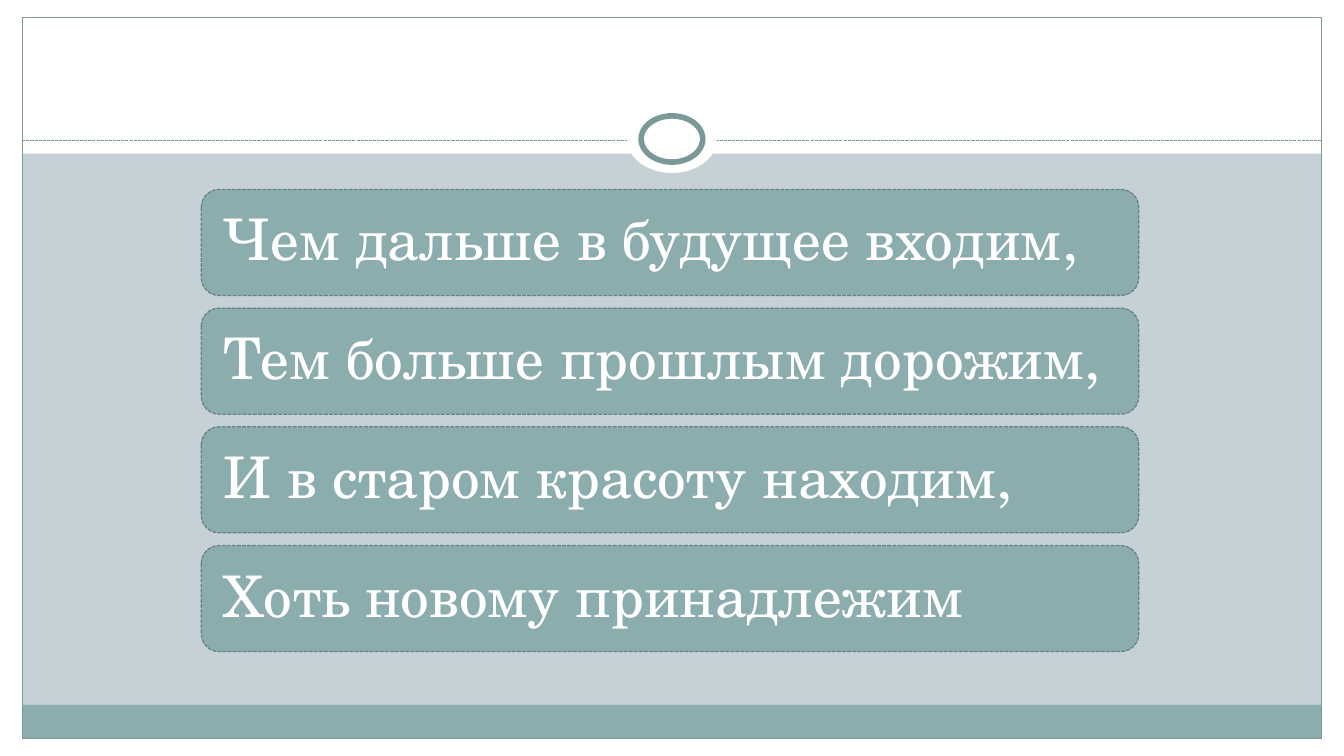
import pptx
import pptx.util
import pptx.dml.color
import pptx.enum.dml
import pptx.enum.shapes
import pptx.enum.text
import lxml.etree

Pt = pptx.util.Pt
Kind = pptx.enum.shapes.MSO_SHAPE
Dash = pptx.enum.dml.MSO_LINE

WHITE = "FFFFFF"
TEAL = "8CADAE"
EDGE = "7C999A"
WIDE, HIGH = 960, 540
SIDE, TOP = 15.9, 12.2
INNER = WIDE - 2 * SIDE
VERSE = (
    "Чем дальше в будущее входим,",
    "Тем больше прошлым дорожим,",
    "И в старом красоту находим,",
    "Хоть новому принадлежим",
)


def color(code):
    return pptx.dml.color.RGBColor.from_string(code)


def paint(item, code):
    item.fill.solid()
    item.fill.fore_color.rgb = color(code)


def stroke(line, code, width, dash=None):
    line.color.rgb = color(code)
    line.width = Pt(width)
    if dash:
        line.dash_style = dash


def shape(slide, kind, box, fill=None, edge=None):
    item = slide.shapes.add_shape(kind, *map(Pt, box))
    item.shadow.inherit = False
    if fill:
        paint(item, fill)
    else:
        item.fill.background()
    if edge:
        stroke(item.line, *edge)
    else:
        item.line.fill.background()
    return item


def rule(slide, left, right, y):
    item = slide.shapes.add_connector(
        pptx.enum.shapes.MSO_CONNECTOR.STRAIGHT, Pt(left), Pt(y), Pt(right), Pt(y)
    )
    stroke(item.line, EDGE, 0.75, Dash.SQUARE_DOT)
    space = "{http://schemas.openxmlformats.org/drawingml/2006/main}"
    lxml.etree.SubElement(item.element.spPr, space + "effectLst")


def card(slide, box, words):
    item = shape(slide, Kind.ROUNDED_RECTANGLE, box, TEAL, ("688081", 0.9, Dash.SQUARE_DOT))
    frame = item.text_frame
    frame.word_wrap = True
    frame.vertical_anchor = pptx.enum.text.MSO_ANCHOR.MIDDLE
    frame.margin_left = frame.margin_right = Pt(12.3)
    frame.margin_top = frame.margin_bottom = Pt(8)
    para = frame.paragraphs[0]
    para.alignment = pptx.enum.text.PP_ALIGN.LEFT
    para.line_spacing = 0.9
    run = para.add_run()
    run.text = words
    run.font.name = "TeX Gyre Schola"
    run.font.size = Pt(41)
    run.font.color.rgb = color(WHITE)


def frame(slide):
    bands = (
        ((0, HIGH - TOP, WIDE, TOP), WHITE),
        ((0, 0, WIDE, 109.7), WHITE),
        ((0, 0, SIDE, HIGH), WHITE),
        ((WIDE - SIDE, 0, SIDE, HIGH), WHITE),
        ((SIDE, 503.4, INNER, 24.4), TEAL),
    )
    for box, fill in bands:
        shape(slide, Kind.RECTANGLE, box, fill)
    shape(slide, Kind.RECTANGLE, (SIDE, TOP, INNER, HIGH - 2 * TOP), edge=(EDGE, 0.75))
    rule(slide, SIDE, WIDE - SIDE, 100.6)
    shape(slide, Kind.OVAL, (448, 75.6, 64, 48), WHITE)
    shape(slide, Kind.OVAL, (458, 82.8, 44, 33), WHITE, (EDGE, 4))


def main():
    deck = pptx.Presentation()
    deck.slide_width, deck.slide_height = Pt(WIDE), Pt(HIGH)
    slide = deck.slides.add_slide(deck.slide_layouts[6])
    paint(slide.background, "C5D1D7")
    frame(slide)
    for row, words in enumerate(VERSE):
        card(slide, (143.8, 135.3 + 84.8 * row, 669.6, 75.7), words)
    deck.save("out.pptx")


if __name__ == "__main__":
    main()
